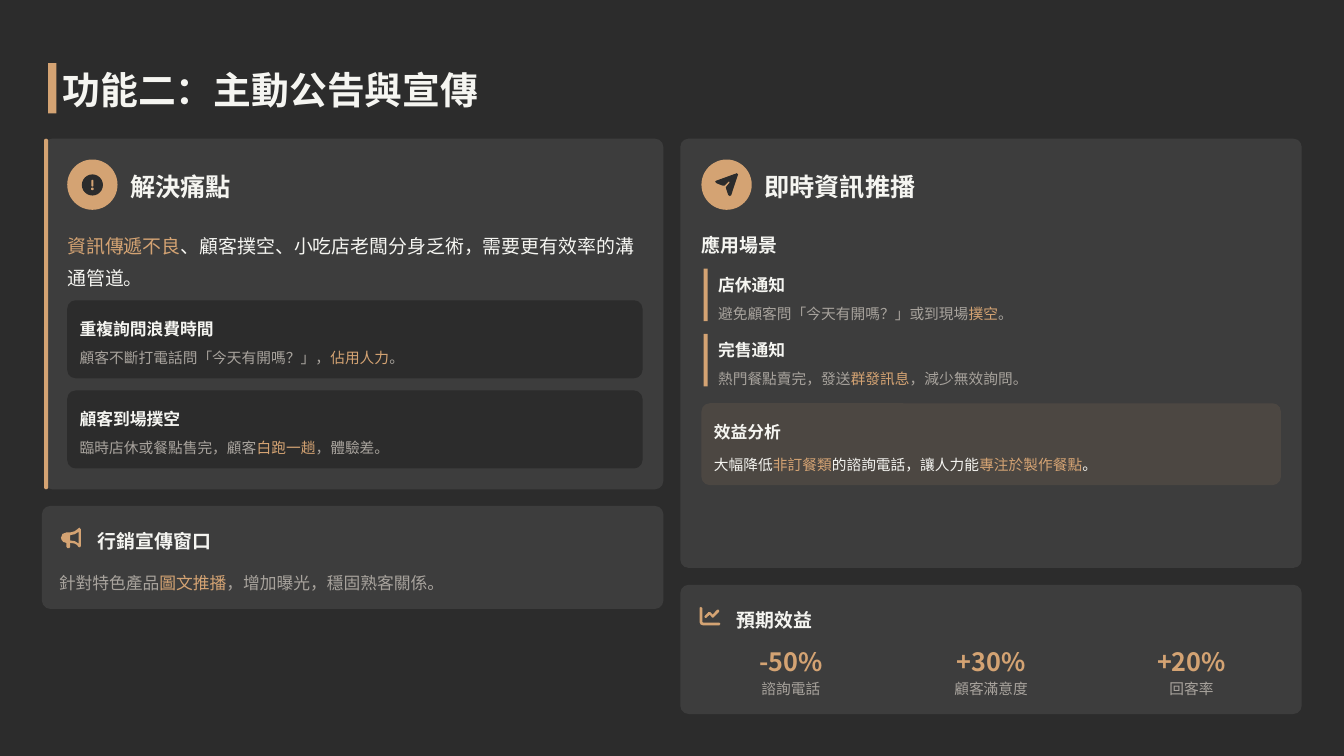
from dataclasses import dataclass

from lxml.etree import SubElement
from pptx import Presentation
from pptx.dml.color import RGBColor
from pptx.enum.shapes import MSO_SHAPE
from pptx.enum.text import MSO_ANCHOR, MSO_AUTO_SIZE, PP_ALIGN
from pptx.oxml.ns import qn
from pptx.util import Cm, Pt


@dataclass(frozen=True)
class Theme:
    """Colours, fonts, type sizes and corner radius of the slide."""

    ground: str = "2C2C2C"
    panel: str = "3D3D3D"
    accent: str = "D4A373"
    light: str = "F5F5F1"
    muted: str = "A8A39D"
    display: str = "Noto Sans CJK SC"
    body: str = "Karla"
    title: int = 36
    heading: int = 24
    lead: int = 18
    name: int = 16
    detail: int = 14
    radius: float = 0.28


MEGAPHONE = [
    [(62, 2), (67, 7), (67, 63), (64, 68), (59, 67), (54, 60), (45, 55), (31, 53),
     (31, 66), (28, 71), (22, 71), (18, 66), (18, 53), (8, 50), (2, 43), (0, 36),
     (5, 23), (18, 18), (31, 18), (46, 14), (59, 4)],
    [(31, 27), (31, 45), (46, 47), (59, 55), (59, 16), (46, 24)],
]
PAPER_PLANE = [
    [(74, 0), (78, 4), (55, 74), (50, 77), (45, 73), (38, 52), (37, 47), (50, 31),
     (48, 28), (46, 28), (32, 42), (27, 42), (6, 34), (1, 29), (5, 25)],
]
TREND = [
    [(0, 8), (4, 5), (9, 9), (9, 56), (12, 58), (66, 58), (70, 62), (66, 67),
     (11, 67), (3, 64), (0, 57)],
    [(66, 19), (64, 23), (46, 41), (42, 41), (34, 31), (22, 42), (18, 42), (16, 37),
     (29, 23), (36, 23), (44, 31), (58, 15), (63, 14)],
]


def set_all(target, formats):
    """Set every attribute named in formats on target."""
    for attribute, value in formats.items():
        setattr(target, attribute, value)


class SlideBuilder:
    """Draws the elements of one slide in one theme."""

    def __init__(self, slide, theme):
        """Keep the slide and theme and paint the background."""
        self.slide, self.theme = slide, theme
        self.paint(slide.background.fill, theme.ground)

    def paint(self, fill, colour):
        """Give a fill one solid colour."""
        fill.solid()
        fill.fore_color.rgb = RGBColor.from_string(colour)

    def finish(self, shape, colour):
        """Fill a shape and take away its line and shadow."""
        self.paint(shape.fill, colour)
        shape.line.fill.background()
        shape.shadow.inherit = False
        return shape

    def block(self, kind, left, top, width, height, colour):
        """Draw a preset shape."""
        area = map(Cm, (left, top, width, height))
        return self.finish(self.slide.shapes.add_shape(kind, *area), colour)

    def card(self, left, top, width, height, colour):
        """Draw a rectangle with the common corner radius."""
        card = self.block(MSO_SHAPE.ROUNDED_RECTANGLE, left, top, width, height, colour)
        card.adjustments[0] = min(0.5, self.theme.radius / min(width, height))
        return card

    def tint(self, left, top, width, height, colour, percent):
        """Draw a translucent card."""
        card = self.card(left, top, width, height, colour)
        shade = card.fill._xPr.find(qn("a:solidFill"))[0]
        SubElement(shade, qn("a:alpha"), val=str(percent * 1000))

    def icon(self, left, top, contours, colour):
        """Draw contours given in hundredths of a centimetre."""
        first, *others = contours
        outline = self.slide.shapes.build_freeform(*first[0], scale=Cm(0.01))
        outline.add_line_segments(first[1:])
        for contour in others:
            outline.move_to(*contour[0])
            outline.add_line_segments(contour[1:])
        self.finish(outline.convert_to_shape(Cm(left), Cm(top)), colour)

    def fill_text(self, holder, wording, size, colour, font, spacing, bold, align):
        """Write wording in which every second part between bars is accented."""
        frame = holder.text_frame
        set_all(frame, {
            "margin_left": 0, "margin_right": 0, "margin_top": 0, "margin_bottom": 0,
            "word_wrap": True, "auto_size": MSO_AUTO_SIZE.NONE,
            "vertical_anchor": MSO_ANCHOR.MIDDLE,
        })
        paragraph = frame.paragraphs[0]
        set_all(paragraph, {"alignment": align, "line_spacing": spacing})
        for index, part in enumerate(wording.split("|")):
            if part:
                run = paragraph.add_run()
                run.text = part
                set_all(run.font, {"size": Pt(size), "bold": bold, "name": font})
                self.paint(run.font.fill, self.theme.accent if index % 2 else colour)
                SubElement(run.font._element, qn("a:ea"), typeface=self.theme.display)

    def text(self, left, top, width, height, wording, size, colour, font=None,
             spacing=1.4, bold=False, align=PP_ALIGN.LEFT):
        """Add a text box."""
        box = self.slide.shapes.add_textbox(*map(Cm, (left, top, width, height)))
        self.fill_text(box, wording, size, colour, font or self.theme.body, spacing, bold, align)

    def title(self, left, top, width, height, wording):
        """Place and write the title placeholder."""
        title = self.slide.shapes.title
        set_all(title, {"left": Cm(left), "top": Cm(top), "width": Cm(width), "height": Cm(height)})
        self.fill_text(title, wording, self.theme.title, self.theme.light,
                       self.theme.display, 0.9, True, PP_ALIGN.LEFT)

    def section(self, left, width, wording):
        """Draw the round badge and heading at the head of a large panel."""
        theme = self.theme
        self.block(MSO_SHAPE.OVAL, left, 5.36, 1.69, 1.69, theme.accent)
        self.text(left + 2.11, 5.66, width, 1.09, wording, theme.heading, theme.light,
                  theme.display, 1.1, True)

    def subheading(self, left, top, width, wording):
        """Write a heading of the second rank."""
        self.text(left, top, width, 0.99, wording, self.theme.lead, self.theme.light,
                  spacing=1.3, bold=True)

    def note(self, left, top, width, gap, name, detail, colour):
        """Write a bold name with a line of detail below it."""
        theme = self.theme
        self.text(left, top, width, 0.85, name, theme.name, theme.light, spacing=1.3, bold=True)
        self.text(left, top + gap, width, 0.78, detail, theme.detail, colour)

    def metric(self, left, figure, label):
        """Write a large figure over its label."""
        theme = self.theme
        self.text(left, 21.62, 6.73, 1.09, figure, theme.heading, theme.accent,
                  theme.display, 1.1, True, PP_ALIGN.CENTER)
        self.text(left, 22.71, 6.73, 0.71, label, theme.detail, theme.muted,
                  spacing=1.2, align=PP_ALIGN.CENTER)


def main():
    """Build the slide and save it."""
    deck = Presentation()
    set_all(deck, {"slide_width": Cm(45.16), "slide_height": Cm(25.4)})
    theme = Theme()
    page = SlideBuilder(deck.slides.add_slide(deck.slide_layouts[5]), theme)

    page.block(MSO_SHAPE.RECTANGLE, 1.62, 2.12, 0.28, 1.69, theme.accent)
    page.title(2.1, 2.4, 14.96, 1.41, "功能二：主動公告與宣傳")

    page.card(1.48, 4.66, 20.81, 11.78, theme.panel)
    page.card(1.48, 4.66, 0.14, 11.78, theme.accent)
    page.section(2.26, 3.91, "解決痛點")
    page.block(MSO_SHAPE.OVAL, 2.75, 5.86, 0.71, 0.71, theme.ground)
    page.card(3.07, 6.04, 0.07, 0.23, theme.accent)
    page.block(MSO_SHAPE.OVAL, 3.06, 6.3, 0.09, 0.09, theme.accent)
    page.text(2.26, 7.62, 19.66, 2.06,
              "|資訊傳遞不良|、顧客撲空、小吃店老闆分身乏術，需要更有效率的溝通管道。",
              theme.lead, theme.light)
    pains = [
        ("重複詢問浪費時間", "顧客不斷打電話問「今天有開嗎？」，|佔用人力|。"),
        ("顧客到場撲空", "臨時店休或餐點售完，顧客|白跑一趟|，體驗差。"),
    ]
    for row, (name, detail) in enumerate(pains):
        top = 10.09 + 3.03 * row
        page.card(2.26, top, 19.33, 2.62, theme.ground)
        page.note(2.68, top + 0.42, 18.76, 0.99, name, detail, theme.muted)

    page.card(1.41, 17, 20.88, 3.46, theme.panel)
    page.icon(2.05, 17.71, MEGAPHONE, theme.accent)
    page.subheading(3.28, 17.58, 4.24, "行銷宣傳窗口")
    page.text(1.98, 18.97, 20.04, 0.92, "針對特色產品|圖文推播|，增加曝光，穩固熟客關係。",
              theme.name, theme.muted)

    page.card(22.86, 4.66, 20.88, 14.42, theme.panel)
    page.section(23.57, 5.64, "即時資訊推播")
    page.icon(24.02, 5.82, PAPER_PLANE, theme.ground)
    page.subheading(23.57, 7.62, 19.79, "應用場景")
    scenarios = [
        ("店休通知", "避免顧客問「今天有開嗎？」或到現場|撲空|。"),
        ("完售通知", "熱門餐點賣完，發送|群發訊息|，減少無效詢問。"),
    ]
    for row, (name, detail) in enumerate(scenarios):
        top = 9.03 + 2.19 * row
        page.block(MSO_SHAPE.RECTANGLE, 23.64, top, 0.14, 1.76, theme.accent)
        page.note(24.13, top, 19.18, 0.99, name, detail, theme.muted)
    page.tint(23.57, 13.55, 19.47, 2.75, theme.accent, 10)
    page.note(23.99, 13.97, 18.88, 1.13, "效益分析",
              "大幅降低|非訂餐類|的諮詢電話，讓人力能|專注於製作餐點|。", theme.light)

    page.card(22.86, 19.65, 20.88, 4.34, theme.panel)
    page.icon(23.51, 20.34, TREND, theme.accent)
    page.subheading(24.75, 20.22, 2.92, "預期效益")
    metrics = [("-50%", "諮詢電話"), ("+30%", "顧客滿意度"), ("+20%", "回客率")]
    for column, (figure, label) in enumerate(metrics):
        page.metric(23.21 + 6.73 * column, figure, label)

    deck.save("out.pptx")


if __name__ == "__main__":
    main()
